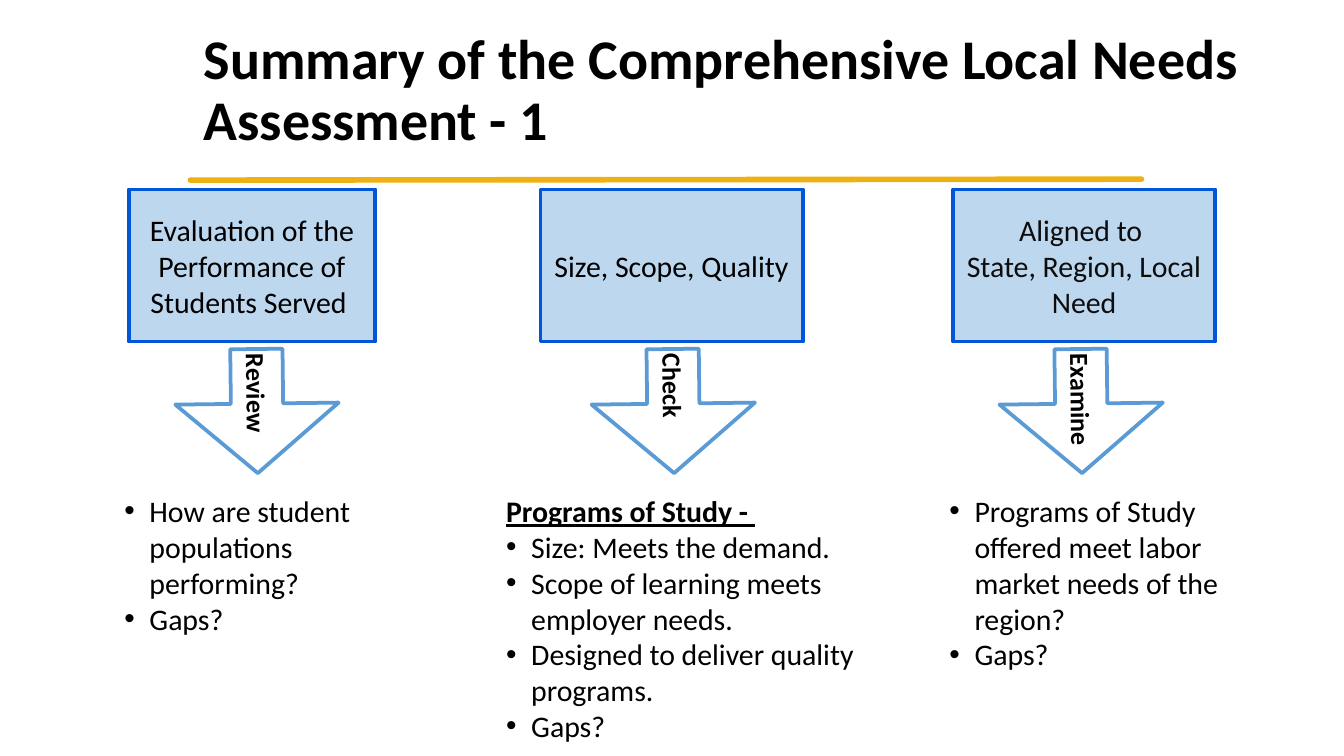
from lxml import etree
from pptx import Presentation
from pptx.dml.color import RGBColor
from pptx.enum.shapes import MSO_CONNECTOR as CONN, MSO_SHAPE as SHAPE
from pptx.enum.text import MSO_ANCHOR as ANCHOR, PP_ALIGN as ALIGN
from pptx.oxml.ns import qn
from pptx.util import Pt


def rgb(value):
    return RGBColor.from_string(value)


class Slide:
    font = "Calibri"
    black, gold, blue = "000000", "EEB111", "0056D6"
    box_fill, arrow_fill, arrow_line = "BDD7EE", "FFFFFF", "5B9BD5"

    def __init__(self, prs):
        self.s = prs.slides.add_slide(prs.slide_layouts[6])

    def run(self, p, text, size, color=black, bold=False, underline=False):
        r = p.add_run()
        r.text = text
        f = r.font
        f.name, f.size, f.bold, f.underline = self.font, Pt(size), bold, underline
        f.color.rgb = rgb(color)

    def paragraphs(self, tf, count):
        return [tf.paragraphs[0]] + [tf.add_paragraph() for _ in range(count - 1)]

    def text_box(self, x, y, w, h, anchor=ANCHOR.TOP):
        tf = self.s.shapes.add_textbox(Pt(x), Pt(y), Pt(w), Pt(h)).text_frame
        tf.word_wrap = True
        tf.vertical_anchor = anchor
        return tf

    def title(self, text, x, y, w, h):
        p = self.text_box(x, y, w, h, ANCHOR.MIDDLE).paragraphs[0]
        p.line_spacing = 0.9
        self.run(p, text, 30, bold=True)

    def rule(self, x1, y1, x2, y2):
        c = self.s.shapes.add_connector(CONN.STRAIGHT, Pt(x1), Pt(y1), Pt(x2), Pt(y2))
        c.line.color.rgb = rgb(self.gold)
        c.line.width = Pt(3)
        sp_pr = c._element.spPr
        sp_pr.find(qn("a:ln")).set("cap", "rnd")
        etree.SubElement(sp_pr, qn("a:effectLst"))

    def shape(self, kind, x, y, w, h, fill, line):
        sp = self.s.shapes.add_shape(kind, Pt(x), Pt(y), Pt(w), Pt(h))
        sp.shadow.inherit = False
        sp.fill.solid()
        sp.fill.fore_color.rgb = rgb(fill)
        sp.line.color.rgb = rgb(line)
        sp.line.width = Pt(2)
        tf = sp.text_frame
        tf.word_wrap = True
        tf.vertical_anchor = ANCHOR.MIDDLE
        tf.margin_left = tf.margin_right = tf.margin_top = tf.margin_bottom = Pt(2.5)
        return sp

    def box(self, x, y, w, h, lines, color):
        tf = self.shape(SHAPE.RECTANGLE, x, y, w, h, self.box_fill, self.blue).text_frame
        for p, text in zip(self.paragraphs(tf, len(lines)), lines):
            p.alignment = ALIGN.CENTER
            self.run(p, text, 16, color)

    def arrow(self, x, y, w, h, label):
        sp = self.shape(SHAPE.RIGHT_ARROW, x, y, w, h, self.arrow_fill, self.arrow_line)
        sp.adjustments[0], sp.adjustments[1] = 0.32, 0.56
        sp.rotation = 89.3
        p = sp.text_frame.paragraphs[0]
        p.alignment = ALIGN.LEFT
        self.run(p, label, 14, bold=True)

    def bullets(self, x, y, w, h, items, heading=None):
        tf = self.text_box(x, y, w, h)
        rows = ([heading] if heading else []) + items
        for p, text in zip(self.paragraphs(tf, len(rows)), rows):
            is_heading = text == heading
            p_pr = p._p.get_or_add_pPr()
            p_pr.set("marL", str(Pt(9 if is_heading else 22.5)))
            p_pr.set("indent", str(Pt(0 if is_heading else -13.5)))
            if not is_heading:
                etree.SubElement(p_pr, qn("a:buFont"), typeface="Arial")
                etree.SubElement(p_pr, qn("a:buChar"), char="•")
            self.run(p, text, 16, bold=is_heading, underline=is_heading)


# Each column: box, arrow and notes, with left edges and widths
COLUMNS = [
    dict(box=(69, 132), lines=["Evaluation of the Performance of Students Served "],
         color="000000", arrow=104.5, label="Review", notes=(50.5, 183, 85),
         items=["How are student populations performing?", "Gaps?"]),
    dict(box=(289.5, 140.5), lines=["Size, Scope, Quality"],
         color="000000", arrow=327.5, label="Check", notes=(255, 215, 181.5),
         heading="Programs of Study - ",
         items=["Size: Meets the demand.", "Scope of learning meets employer needs.",
                "Designed to deliver quality programs.", "Gaps?"]),
    dict(box=(510.5, 140.5), lines=["Aligned to ", "State, Region, Local", "Need"],
         color="0D0D0D", arrow=546, label="Examine", notes=(492.5, 196, 143.5),
         items=["Programs of Study offered meet labor market needs of the region?",
                "Gaps?"]),
]


def main():
    prs = Presentation()
    prs.slide_width, prs.slide_height = Pt(720), Pt(405)
    slide = Slide(prs)

    # Heading
    slide.rule(102, 96.5, 611.5, 96)
    slide.title("Summary of the Comprehensive Local Needs Assessment - 1",
                102, 10, 580, 78.5)

    # Three columns
    for col in COLUMNS:
        x, w = col["box"]
        slide.box(x, 101.5, w, 81.5, col["lines"], col["color"])
        slide.arrow(col["arrow"], 176.5, 66.5, 87.5, col["label"])
        x, w, h = col["notes"]
        slide.bullets(x, 260.5, w, h, col["items"], col.get("heading"))

    prs.save("out.pptx")


if __name__ == "__main__":
    main()
